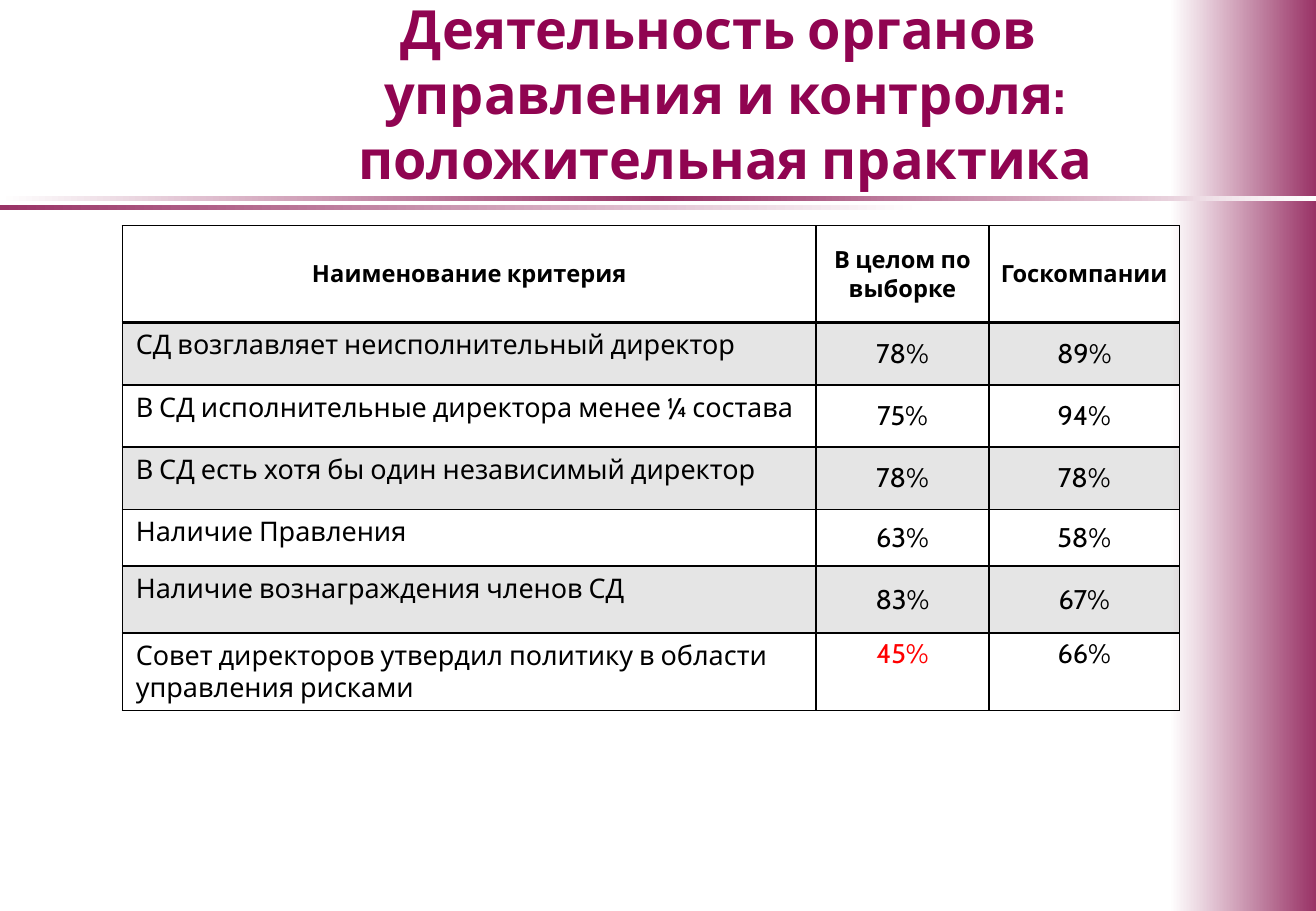
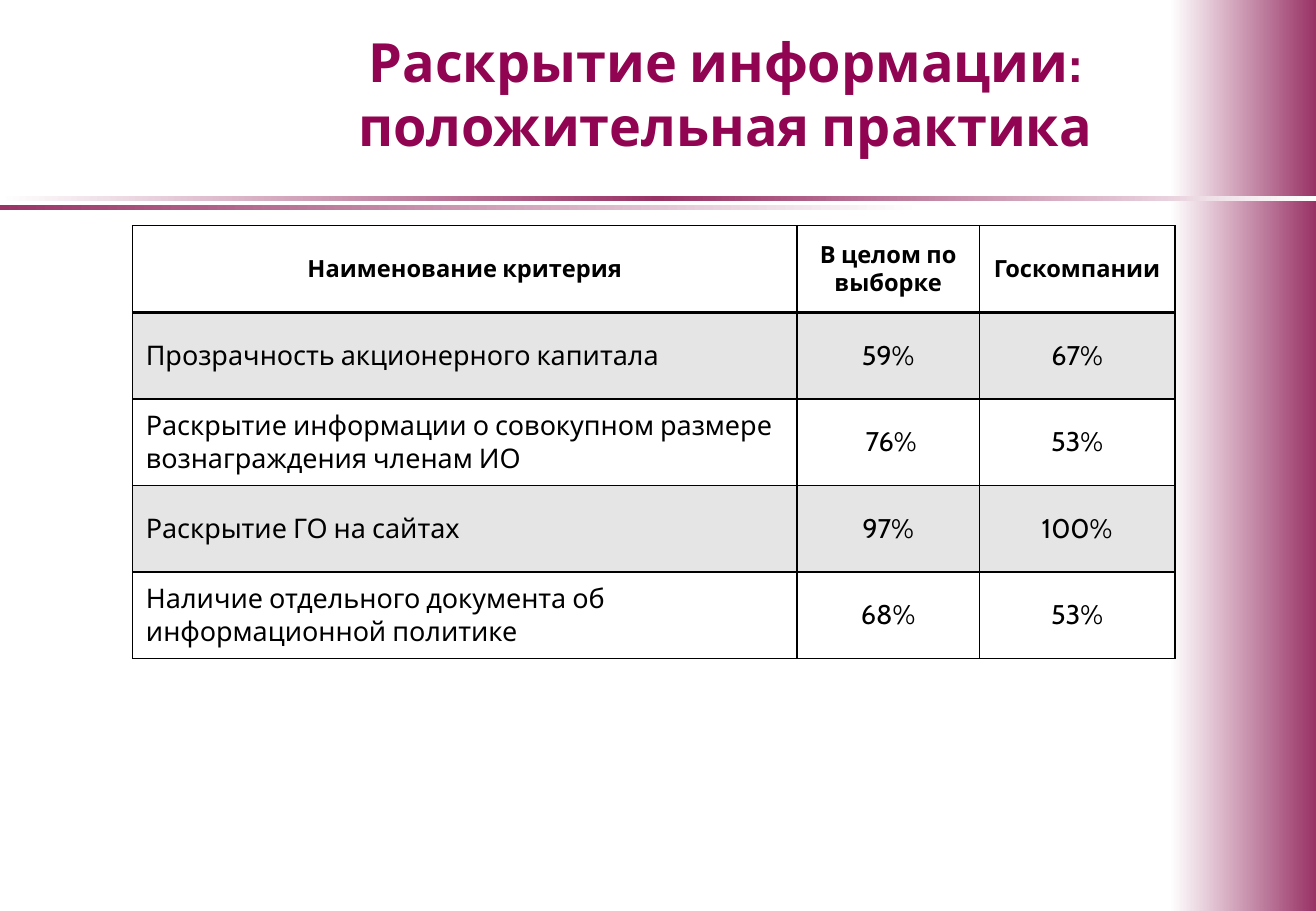
from copy import deepcopy

from lxml import etree
from pptx import Presentation
from pptx.dml.color import RGBColor
from pptx.enum.shapes import MSO_SHAPE
from pptx.enum.text import MSO_ANCHOR, PP_ALIGN
from pptx.oxml.ns import qn
from pptx.util import Cm, Pt

RECTANGLE = MSO_SHAPE.RECTANGLE
TOP, MIDDLE = MSO_ANCHOR.TOP, MSO_ANCHOR.MIDDLE
CENTER, LEFT = PP_ALIGN.CENTER, PP_ALIGN.LEFT

FONT = "Cabin"
WHITE, BLACK, RED, GREY = "FFFFFF", "000000", "FF0000", "808080"
PLUM, TITLE_COLOR = "993366", "900451"
SLIDE_W, SLIDE_H = 27.51, 19.05

# Shared bands: left, top, width, height, gradient colours
BANDS = [
    (24.46, 0, 3.05, SLIDE_H, (WHITE, PLUM)),
    (0, 4.11, SLIDE_W, 0.1, (WHITE, PLUM, WHITE)),
    (0, 4.29, 19.25, 0.1, (PLUM, WHITE)),
]
HEADER = ("Наименование критерия", "В целом по выборке", "Госкомпании")

SLIDES = [
    {
        "title": "Деятельность органов \vуправления и контроля: положительная практика",
        "left": 2.56,
        "columns": (14.5, 3.61, 3.99),
        "heights": (2.03, 1.3, 1.3, 1.3, 1.19, 1.4, 1.61),
        "insets": (0.2, 0),
        "criterion_anchor": TOP,
        "raised_row": 6,
        "red_cells": {(6, 1)},
        "unfilled_rows": {2, 4},
        "rows": [
            ("СД возглавляет неисполнительный директор", "78%", "89%"),
            ("В СД исполнительные директора менее ¼ состава", "75%", "94%"),
            ("В СД есть хотя бы один независимый директор", "78%", "78%"),
            ("Наличие Правления", "63%", "58%"),
            ("Наличие вознаграждения членов СД", "83%", "67%"),
            ("Совет директоров утвердил политику в области управления рисками",
             "45%", "66%"),
        ],
    },
    {
        "title": "Раскрытие информации: положительная практика",
        "left": 2.77,
        "columns": (13.89, 3.81, 4.09),
        "heights": (1.81,) * 5,
        "insets": (0.25, 0.13),
        "criterion_anchor": MIDDLE,
        "raised_row": None,
        "red_cells": set(),
        "unfilled_rows": set(),
        "rows": [
            ("Прозрачность акционерного капитала", "59%", "67%"),
            ("Раскрытие информации о совокупном размере вознаграждения членам ИО",
             " 76%", "53%"),
            ("Раскрытие ГО на сайтах", "97%", "100%"),
            ("Наличие отдельного документа об информационной политике",
             "68%", "53%"),
        ],
    },
]


def rgb(value):
    return RGBColor.from_string(value)


def add_border(cell, side, points):
    """Draw one black side of a table cell."""
    line = etree.SubElement(cell._tc.get_or_add_tcPr(), qn(f"a:ln{side}"),
                            w=str(Pt(points)))
    solid = etree.SubElement(line, qn("a:solidFill"))
    etree.SubElement(solid, qn("a:srgbClr"), val=BLACK)


prs = Presentation()
prs.slide_width, prs.slide_height = Cm(SLIDE_W), Cm(SLIDE_H)

for content in SLIDES:
    slide = prs.slides.add_slide(prs.slide_layouts[6])

    # Gradient bands
    for left, top, width, height, colors in BANDS:
        band = slide.shapes.add_shape(RECTANGLE, Cm(left), Cm(top),
                                      Cm(width), Cm(height))
        band.shadow.inherit = False
        band.line.fill.background()
        band.fill.gradient()
        band.fill.gradient_angle = 0
        stop_list = band._element.spPr.find(".//" + qn("a:gsLst"))
        if len(colors) == 3:
            stop_list.append(deepcopy(stop_list[-1]))
        for i, (stop, color) in enumerate(zip(band.fill.gradient_stops, colors)):
            stop.color.rgb = rgb(color)
            stop.position = i / (len(colors) - 1)

    # Title
    title = slide.shapes.add_textbox(Cm(3.4), 0, Cm(23.52), Cm(3.89)).text_frame
    title.word_wrap = True
    title.vertical_anchor = MIDDLE
    heading = title.paragraphs[0]
    heading.text = content["title"]
    heading.alignment = CENTER
    heading.font.name, heading.font.size = FONT, Pt(32)
    heading.font.bold = True
    heading.font.color.rgb = rgb(TITLE_COLOR)

    # Criteria table
    rows = [HEADER] + content["rows"]
    criteria = slide.shapes.add_table(
        len(rows), len(HEADER), Cm(content["left"]), Cm(4.72),
        Cm(sum(content["columns"])), Cm(sum(content["heights"]))).table
    criteria.horz_banding = False
    for column, width in zip(criteria.columns, content["columns"]):
        column.width = Cm(width)
    for row, height in zip(criteria.rows, content["heights"]):
        row.height = Cm(height)

    for r, texts in enumerate(rows):
        for c, text in enumerate(texts):
            cell = criteria.cell(r, c)
            is_header = r == 0
            is_criterion = c == 0 and not is_header

            # Borders come before the fill; the header rule is heavier
            for side in "LRTB":
                heavy = (r, side) in ((0, "B"), (1, "T"))
                add_border(cell, side, 2 if heavy else 1)
            if is_header or r in content["unfilled_rows"]:
                cell.fill.background()
            else:
                cell.fill.solid()
                cell.fill.fore_color.rgb = rgb(GREY if r % 2 else WHITE)
                tint = cell._tc.tcPr.find(qn("a:solidFill"))[0]
                etree.SubElement(tint, qn("a:alpha"), val="20000")

            # Insets and anchor
            side_inset, end_inset = (0.28, 0.13) if is_criterion else content["insets"]
            cell.vertical_anchor = content["criterion_anchor"] if is_criterion else MIDDLE
            if r == content["raised_row"] and not is_criterion:
                cell.vertical_anchor, end_inset = TOP, 0.1
            cell.margin_left = cell.margin_right = Cm(side_inset)
            cell.margin_top = cell.margin_bottom = Cm(end_inset)

            # Text
            entry = cell.text_frame.paragraphs[0]
            entry.text = text
            entry.alignment = LEFT if is_criterion else CENTER
            entry.font.name = FONT
            entry.font.size = Pt(14 if is_header else 16)
            entry.font.bold = is_header
            entry.font.color.rgb = rgb(RED if (r, c) in content["red_cells"] else BLACK)

prs.save("out.pptx")
